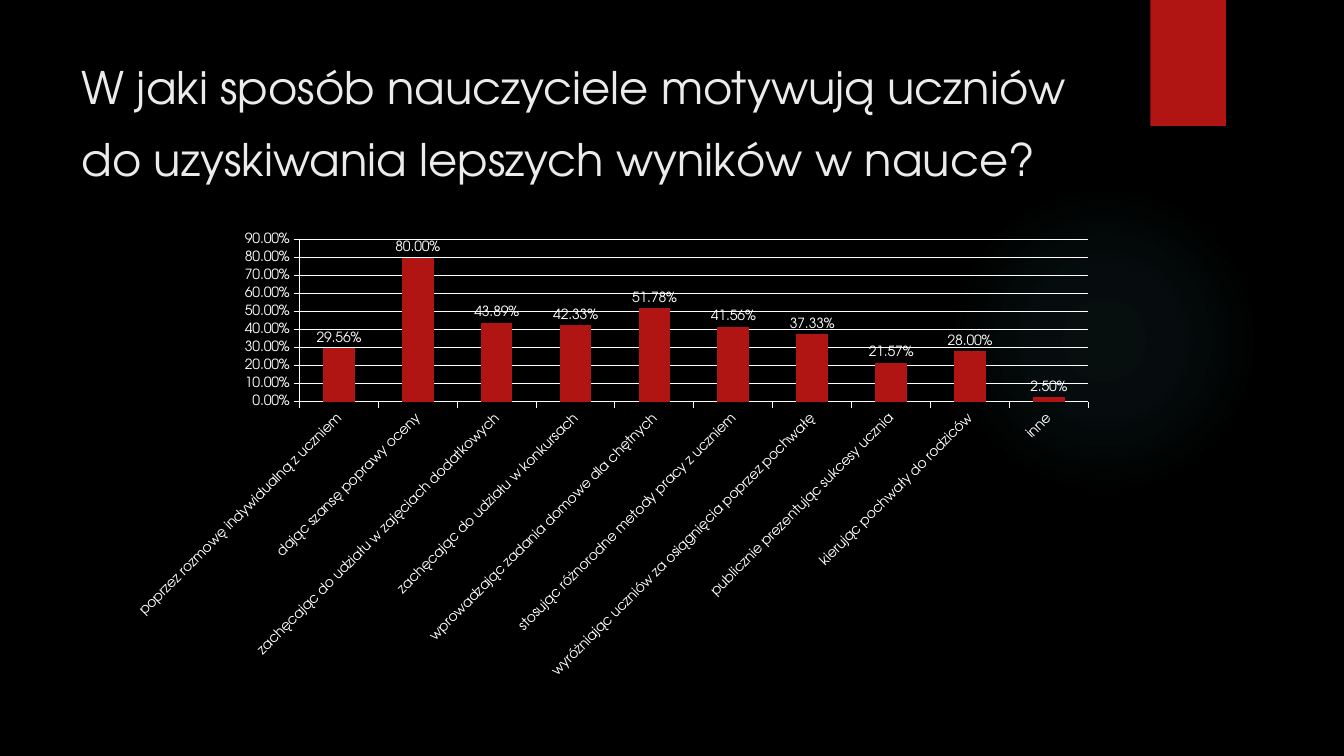
from pptx import Presentation
from pptx.chart.data import CategoryChartData
from pptx.dml.color import RGBColor
from pptx.enum import chart as charts, shapes, text
from pptx.oxml import parse_xml
from pptx.oxml.ns import nsdecls, qn
from pptx.util import Inches, Pt

FONT = "TeX Gyre Adventor"
BLACK = RGBColor(0x00, 0x00, 0x00)
WHITE = RGBColor(0xFF, 0xFF, 0xFF)
LIGHT = RGBColor(0xEB, 0xEB, 0xEB)
RED = RGBColor(0xB0, 0x15, 0x13)
TEAL = RGBColor(0x50, 0xB9, 0xC1)

ANSWERS = [
    ("poprzez rozmowę indywidualną z uczniem", 0.2956),
    ("dając szansę poprawy oceny", 0.8),
    ("zachęcając do udziału w zajęciach dodatkowych", 0.4389),
    ("zachęcając do udziału w konkursach", 0.4233),
    ("wprowadzając zadania domowe dla chętnych", 0.5178),
    ("stosując różnorodne metody pracy z uczniem", 0.4156),
    ("wyróżniając uczniów za osiągnięcia poprzez pochwałę", 0.3733),
    ("publicznie prezentując sukcesy ucznia", 0.2157),
    ("kierując pochwały do rodziców", 0.28),
    ("inne", 0.025),
]

presentation = Presentation()
presentation.slide_width = Inches(13.33)
presentation.slide_height = Inches(7.5)
slide = presentation.slides.add_slide(presentation.slide_layouts[6])
slide.background.fill.solid()
slide.background.fill.fore_color.rgb = BLACK

# Faint round glow, fading out towards its edge
glow = slide.shapes.add_shape(
    shapes.MSO_SHAPE.OVAL, Inches(9.41), Inches(1.83), Inches(3.08), Inches(3.08))
glow.shadow.inherit = False
glow.line.fill.background()
stops = "".join(
    f'<a:gs pos="{position * 1000}"><a:srgbClr val="{TEAL}">'
    f'<a:alpha val="{opacity * 1000}"/></a:srgbClr></a:gs>'
    for position, opacity in [(0, 7), (36, 6), (69, 0), (100, 0)])
gradient = parse_xml(
    f'<a:gradFill {nsdecls("a")} rotWithShape="1"><a:gsLst>{stops}</a:gsLst>'
    '<a:path path="circle"><a:fillToRect l="50000" t="50000" r="50000" b="50000"/>'
    '</a:path></a:gradFill>')
glow._element.spPr.find(qn("a:prstGeom")).addnext(gradient)

# Red tab at the top
tab = slide.shapes.add_shape(
    shapes.MSO_SHAPE.RECTANGLE, Inches(11.41), 0, Inches(0.75), Inches(1.25))
tab.shadow.inherit = False
tab.fill.solid()
tab.fill.fore_color.rgb = RED
tab.line.fill.background()

# Title
title = slide.shapes.add_textbox(Inches(0.71), Inches(0.42), Inches(10.29), Inches(1.53))
title.text_frame.word_wrap = True
title.text_frame.margin_top = 0
title.text_frame.vertical_anchor = text.MSO_ANCHOR.TOP
paragraph = title.text_frame.paragraphs[0]
paragraph.text = ("W jaki sposób nauczyciele motywują uczniów "
                  "do uzyskiwania lepszych wyników w nauce?")
paragraph.line_spacing = Pt(51)
paragraph.font.name = FONT
paragraph.font.size = Pt(32)
paragraph.font.color.rgb = LIGHT

# Column chart
chart_data = CategoryChartData(number_format="0.00%")
chart_data.categories = [answer for answer, share in ANSWERS]
chart_data.add_series("Series 1", [share for answer, share in ANSWERS])
chart = slide.shapes.add_chart(
    charts.XL_CHART_TYPE.COLUMN_CLUSTERED,
    Inches(1.21), Inches(2.24), Inches(9.78), Inches(4.59), chart_data).chart
chart.has_legend = False
chart.has_title = False
chart.font.name = FONT
chart.font.size = Pt(10)
chart.font.color.rgb = WHITE

plot = chart.plots[0]
plot.gap_width = 150
plot.vary_by_categories = False
series_fill = plot.series[0].format.fill
series_fill.solid()
series_fill.fore_color.rgb = RED

plot.has_data_labels = True
labels = plot.data_labels
labels.show_value = True
labels.number_format = "0.00%"
labels.number_format_is_linked = False
labels.position = charts.XL_LABEL_POSITION.OUTSIDE_END

# Axes
value_axis = chart.value_axis
value_axis.minimum_scale = 0
value_axis.maximum_scale = 0.9
value_axis.major_unit = 0.1
value_axis.has_major_gridlines = True
value_axis.tick_labels.number_format = "0.00%"
value_axis.tick_labels.number_format_is_linked = False
for axis in (chart.category_axis, value_axis):
    axis.major_tick_mark = charts.XL_TICK_MARK.OUTSIDE
    axis.tick_labels.font.name = FONT
    axis.tick_labels.font.size = Pt(10)
    axis.tick_labels.font.color.rgb = WHITE
for line in (chart.category_axis.format.line, value_axis.format.line,
             value_axis.major_gridlines.format.line):
    line.color.rgb = WHITE
    line.width = Pt(0.75)

# Slanted category labels
label_body = chart.category_axis._element.find(qn("c:txPr")).find(qn("a:bodyPr"))
label_body.set("rot", "-2700000")
label_body.set("vert", "horz")

# Fixed plot area, leaving room for the labels below
plot_area = chart._chartSpace.chart.plotArea
for layout in plot_area.findall(qn("c:layout")):
    plot_area.remove(layout)
plot_area.insert(0, parse_xml(
    f'<c:layout {nsdecls("c")}><c:manualLayout><c:layoutTarget val="inner"/>'
    '<c:xMode val="edge"/><c:yMode val="edge"/>'
    '<c:x val="0.18"/><c:y val="0.03"/><c:w val="0.8"/><c:h val="0.35"/>'
    '</c:manualLayout></c:layout>'))

presentation.save("out.pptx")
